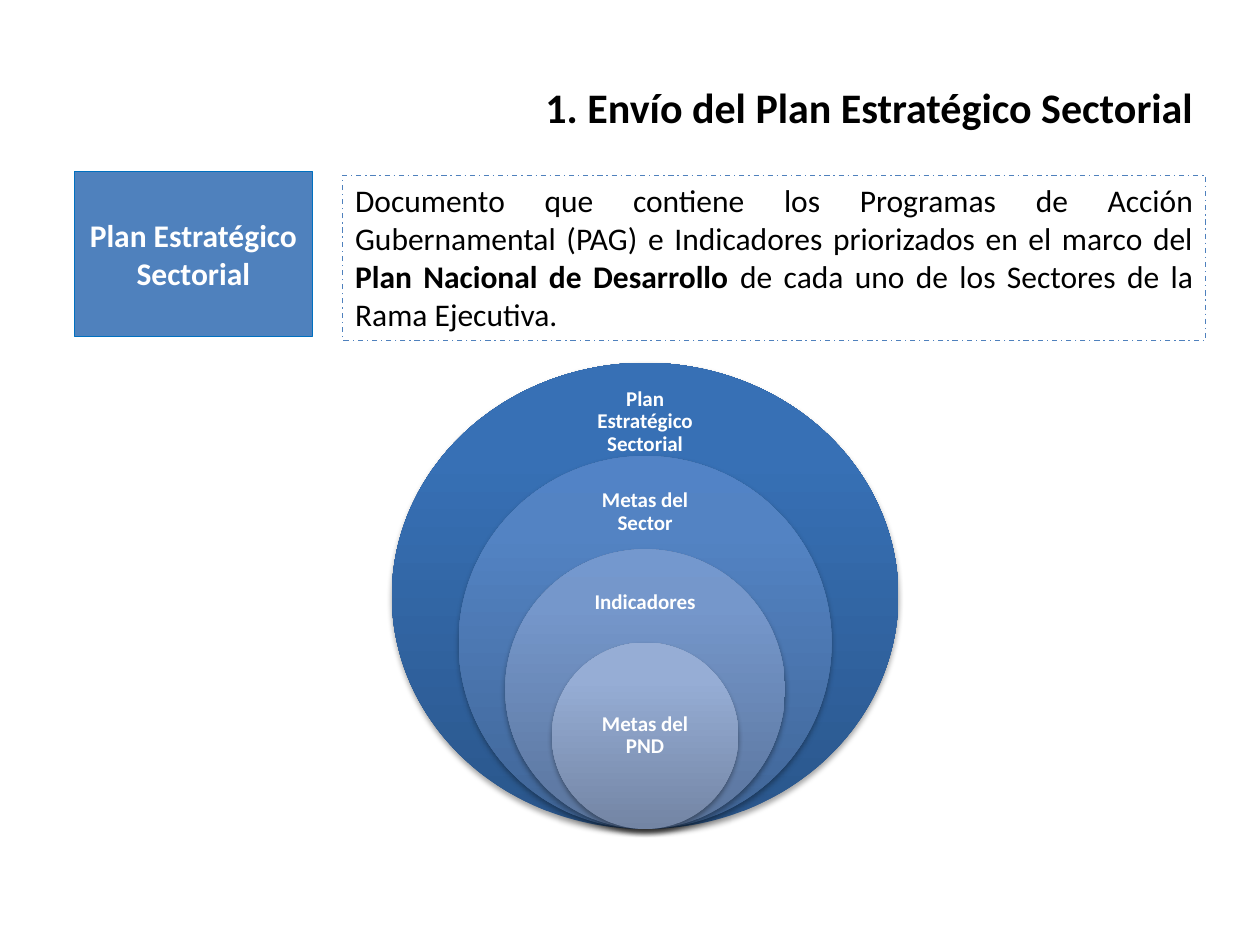
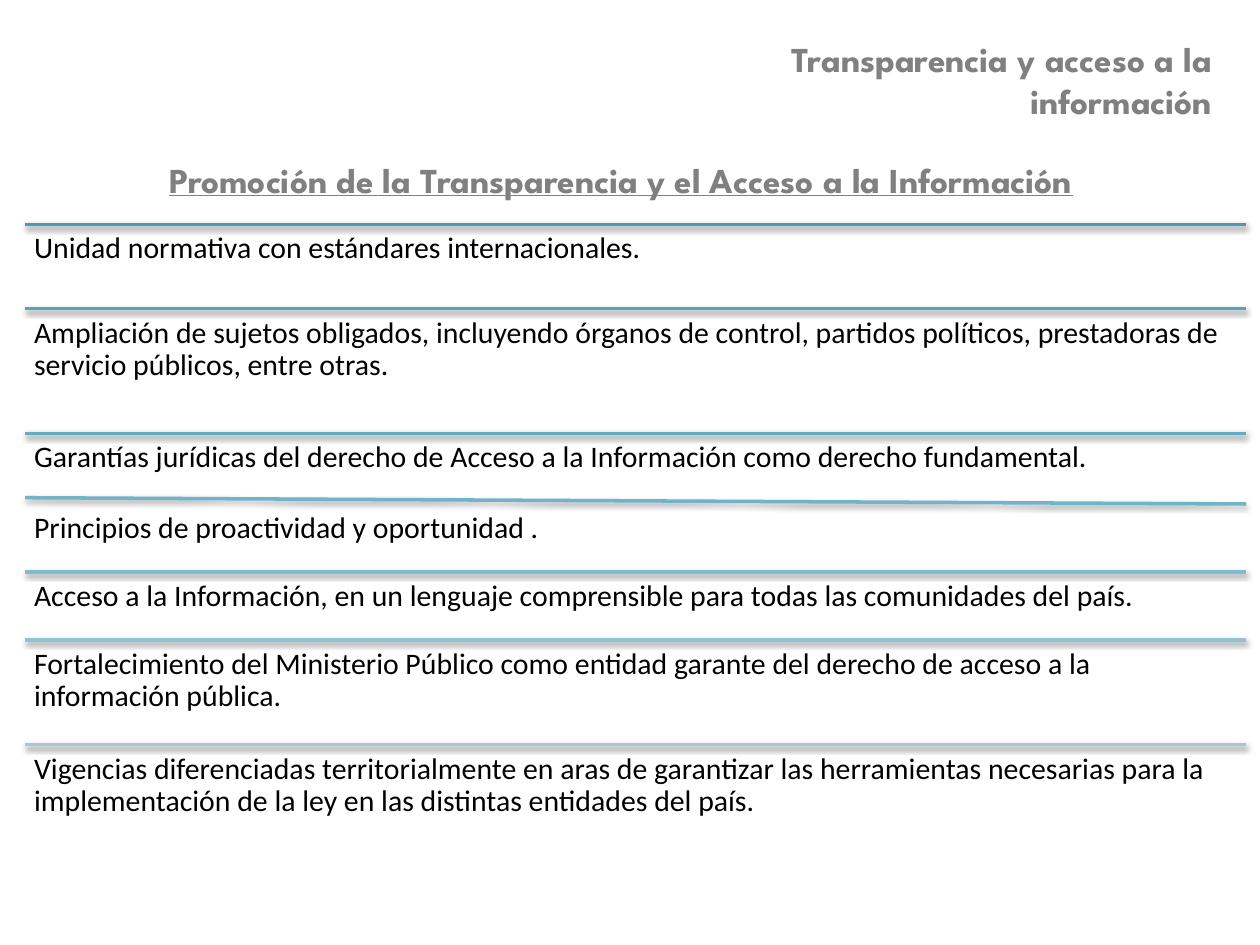
import dataclasses

import lxml.etree
import pptx
import pptx.dml.color
import pptx.enum.dml
import pptx.enum.shapes
import pptx.enum.text
import pptx.oxml.ns
import pptx.util

Inches = pptx.util.Inches
Pt = pptx.util.Pt
qn = pptx.oxml.ns.qn
ALIGN = pptx.enum.text.PP_ALIGN
ANCHOR = pptx.enum.text.MSO_ANCHOR
SHAPE = pptx.enum.shapes.MSO_SHAPE


@dataclasses.dataclass(frozen=True)
class Theme:
    body: str = "Calibri"
    display: str = "League Spartan"
    black: str = "000000"
    white: str = "FFFFFF"
    grey: str = "808080"
    blue: str = "4F81BD"
    edge: str = "0070C0"
    head: int = 24
    subhead: int = 20
    text: int = 18
    row: int = 17
    ring: int = 12


THEME = Theme()
PLAIN = {"name": THEME.body, "size": THEME.text, "color": THEME.black, "bold": False}
STRONG = PLAIN | {"bold": True}
HEAD = STRONG | {"size": THEME.head}
LABEL = STRONG | {"color": THEME.white}
RING = LABEL | {"size": THEME.ring}
ROW = PLAIN | {"size": THEME.row}
TOPIC = STRONG | {"name": THEME.display, "size": THEME.subhead, "color": THEME.grey}

# Label, label (top, width, height), gradient colours from bottom to top
RINGS = [
    ("Plan Estratégico Sectorial", (0.19, 1.12, 0.56), ("2A568B", "3770B5", "3570B8")),
    ("Metas del Sector", (0.92, 1.03, 0.53), ("406596", "5383C3", "5283C6")),
    ("Indicadores", (1.65, 1.03, 0.5), ("5A749C", "7597CB", "7498CE")),
    ("Metas del PND", (2.59, 1.05, 0.74), ("7385A4", "96ADD5", "95ADD7")),
]
STOPS = (0, 80, 100)

# Text, height of row, colour of rule
ROWS = [
    ("Unidad normativa con estándares internacionales.", 0.67, "449CB4"),
    ("Ampliación de sujetos obligados, incluyendo órganos de control, partidos "
     "políticos, prestadoras de servicio públicos, entre otras.", 0.99, "51A5BC"),
    ("Garantías jurídicas del derecho de Acceso a la Información como derecho "
     "fundamental.", 0.56, "61ACC2"),
    ("Principios de proactividad y oportunidad .", 0.54, "71B3C8"),
    ("Acceso a la Información, en un lenguaje comprensible para todas las "
     "comunidades del país.", 0.54, "81BACE"),
    ("Fortalecimiento del Ministerio Público como entidad garante del derecho de "
     "acceso a la información pública.", 0.83, "91C2D3"),
    ("Vigencias diferenciadas territorialmente en aras de garantizar las "
     "herramientas necesarias para la implementación de la ley en las distintas "
     "entidades del país.", 0.99, "A1CAD9"),
]
SLANT = {3: 0.05}  # rise of the left end of a rule, by row


def rgb(code):
    return pptx.dml.color.RGBColor.from_string(code)


def style(target, values):
    for key, value in values.items():
        if key == "color":
            target.color.rgb = rgb(value)
        else:
            setattr(target, key, Pt(value) if key == "size" else value)


def write(shape, lines, align, anchor=ANCHOR.TOP, inset=None, para=None):
    """Fill a shape with lines, each a list of (text, font) runs."""
    frame = shape.text_frame
    style(frame, {"word_wrap": True, "vertical_anchor": anchor,
                  "auto_size": pptx.enum.text.MSO_AUTO_SIZE.NONE})
    if inset is not None:
        for side in ("left", "top", "right", "bottom"):
            setattr(frame, f"margin_{side}", Inches(inset))
    for i, runs in enumerate(lines):
        item = frame.add_paragraph() if i else frame.paragraphs[0]
        style(item, {"alignment": align} | (para or {}))
        for text, font in runs:
            run = item.add_run()
            run.text = text
            style(run.font, font)


def place(shape, box):
    for key, value in zip(("left", "top", "width", "height"), box):
        setattr(shape, key, Inches(value))


def add_text(slide, box, lines, align, **rest):
    area = slide.shapes.add_textbox(*map(Inches, box))
    write(area, lines, align, **rest)


def add_shape(slide, kind, box):
    shape = slide.shapes.add_shape(kind, *map(Inches, box))
    shape.shadow.inherit = False
    return shape


def add_title(slide, box, text, font, align):
    place(slide.shapes.title, box)
    write(slide.shapes.title, [[(text, font)]], align, ANCHOR.MIDDLE)


def cast(shape, alpha, drop):
    """Give a shape or connector a soft shadow straight below it."""
    props = shape._element.spPr
    effects = props.find(qn("a:effectLst"))
    if effects is None:
        effects = lxml.etree.SubElement(props, qn("a:effectLst"))
    outer = lxml.etree.SubElement(
        effects, qn("a:outerShdw"), blurRad=str(Pt(3.1)), dist=str(Pt(drop)),
        dir="5400000", rotWithShape="0")
    color = lxml.etree.SubElement(outer, qn("a:srgbClr"), val=THEME.black)
    lxml.etree.SubElement(color, qn("a:alpha"), val=str(alpha * 1000))


def shade(shape, colors):
    """Fill a shape with a gradient that runs upwards."""
    shape.fill.gradient()
    shape.fill.gradient_angle = 90
    stops = shape._element.spPr.find(".//" + qn("a:gsLst"))
    for old in list(stops):
        stops.remove(old)
    for pos, code in zip(STOPS, colors):
        stop = lxml.etree.SubElement(stops, qn("a:gs"), pos=str(pos * 1000))
        lxml.etree.SubElement(stop, qn("a:srgbClr"), val=code)


def add_brief(slide, box):
    """Place the term on the left and its meaning on the right."""
    left, top, width, height = box
    note = add_shape(slide, SHAPE.RECTANGLE, (left + 2.13, top + 0.03, width - 2.13, height))
    note.fill.background()
    style(note.line, {"color": THEME.blue, "width": Pt(0.75),
                      "dash_style": pptx.enum.dml.MSO_LINE.DASH_DOT})
    write(note, [[
        ("Documento que contiene los Programas de Acción Gubernamental (PAG) e "
         "Indicadores priorizados en el marco del ", PLAIN),
        ("Plan Nacional de Desarrollo ", STRONG),
        ("de cada uno de los Sectores de la Rama Ejecutiva.", PLAIN),
    ]], ALIGN.JUSTIFY)
    term = add_shape(slide, SHAPE.RECTANGLE, (left, top, 1.89, height))
    term.fill.solid()
    term.fill.fore_color.rgb = rgb(THEME.blue)
    style(term.line, {"color": THEME.edge, "width": Pt(0.75)})
    write(term, [[("Plan Estratégico", LABEL)], [("Sectorial", LABEL)]],
          ALIGN.CENTER, ANCHOR.MIDDLE)


def add_rings(slide, box):
    """Stack ovals that share the foot of the box, each a fifth smaller."""
    left, top, width, height = box
    mid = left + width / 2
    for i, (text, (drop, wide, high), colors) in enumerate(RINGS):
        size = height * (1 - i / 5)
        span = size if i else width
        ring = add_shape(slide, SHAPE.OVAL, (mid - span / 2, top + height - size, span, size))
        shade(ring, colors)
        ring.line.fill.background()
        cast(ring, 35, 1.8)
        add_text(slide, (mid - wide / 2, top + drop, wide, high), [[(text, RING)]],
                 ALIGN.CENTER, anchor=ANCHOR.MIDDLE, inset=0.09,
                 para={"line_spacing": 0.9, "space_after": Pt(4.2)})


def add_rows(slide, box):
    """List the rows from the top of the box, each under its rule."""
    left, top, width = box
    for i, (text, height, color) in enumerate(ROWS):
        rise = SLANT.get(i, 0)
        rule = slide.shapes.add_connector(
            pptx.enum.shapes.MSO_CONNECTOR.STRAIGHT,
            *map(Inches, (left, top - rise, left + width, top)))
        style(rule.line, {"color": color, "width": Pt(2)})
        cast(rule, 38, 1.6)
        add_text(slide, (left, top, width, height), [[(text, ROW)]], ALIGN.LEFT,
                 inset=0.07, para={"line_spacing": 0.9, "space_after": Pt(6)})
        top += height


def plan_slide(slide):
    add_title(slide, (2.48, 0.6, 7.09, 0.5), "1. Envío del Plan Estratégico Sectorial",
              HEAD, ALIGN.RIGHT)
    add_brief(slide, (0.59, 1.36, 8.98, 1.31))
    add_rings(slide, (3.11, 2.88, 4.02, 3.7))


def access_slide(slide):
    add_title(slide, (0.45, 0.99, 8.96, 0.87),
              "Promoción de la Transparencia y el Acceso a la Información",
              TOPIC | {"underline": True}, ALIGN.CENTER)
    add_rows(slide, (0.2, 1.78, 9.69))
    add_text(slide, (4.72, 0.25, 5, 0.77),
             [[("Transparencia y acceso a la información", TOPIC)]], ALIGN.RIGHT)


def main():
    deck = pptx.Presentation()
    deck.slide_width, deck.slide_height = Inches(10), Inches(7.5)
    for build in (plan_slide, access_slide):
        build(deck.slides.add_slide(deck.slide_layouts[5]))
    deck.save("out.pptx")


if __name__ == "__main__":
    main()
